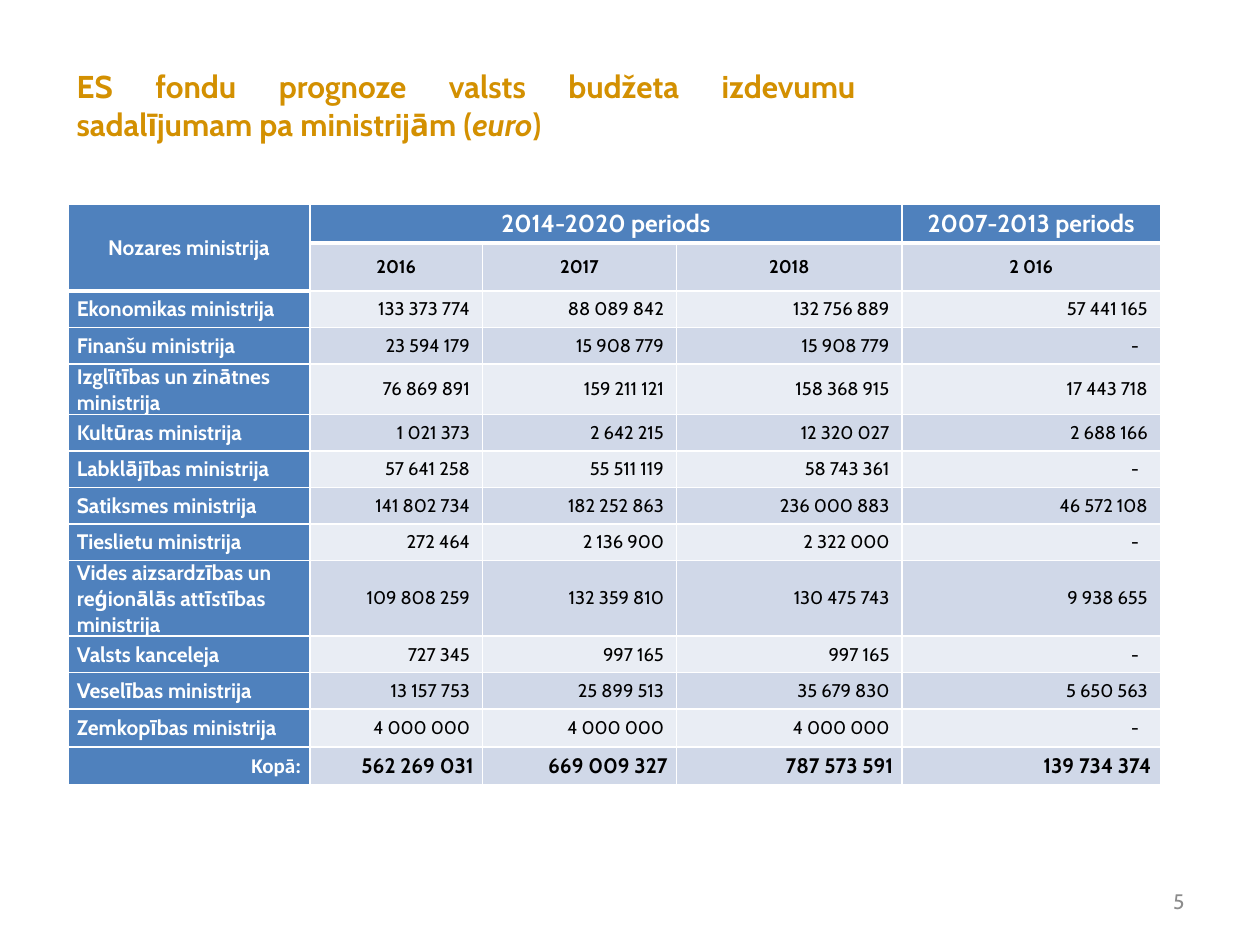
from lxml.etree import SubElement
from pptx import Presentation
from pptx.dml.color import RGBColor
from pptx.enum.text import MSO_ANCHOR, PP_ALIGN as AL
from pptx.oxml.ns import qn
from pptx.util import Inches, Pt

GOLD = RGBColor(0xD3, 0x90, 0x01)
GRAY = RGBColor(0x8C, 0x8C, 0x8C)
BLUE = RGBColor(0x4F, 0x81, 0xBD)
DARK_BAND = RGBColor(0xD0, 0xD8, 0xE8)
LIGHT_BAND = RGBColor(0xE9, 0xED, 0xF4)
WHITE = RGBColor(0xFF, 0xFF, 0xFF)
BLACK = RGBColor(0, 0, 0)

TITLE = [
    ("ES fondu prognoze valsts budžeta izdevumu sadalījumam pa ministrijām (", False),
    ("euro", True),
    (")", False),
]
PERIODS = ["Nozares ministrija", "2014-2020 periods", "", "", "2007-2013 periods"]
YEARS = ["", "2016", "2017", "2018", "2 016"]
MINISTRIES = [
    ("Ekonomikas ministrija", "133 373 774", "88 089 842", "132 756 889", "57 441 165"),
    ("Finanšu ministrija", "23 594 179", "15 908 779", "15 908 779", "-"),
    ("Izglītības un zinātnes ministrija", "76 869 891", "159 211 121", "158 368 915", "17 443 718"),
    ("Kultūras ministrija", "1 021 373", "2 642 215", "12 320 027", "2 688 166"),
    ("Labklājības ministrija", "57 641 258", "55 511 119", "58 743 361", "-"),
    ("Satiksmes ministrija", "141 802 734", "182 252 863", "236 000 883", "46 572 108"),
    ("Tieslietu ministrija", "272 464", "2 136 900", "2 322 000", "-"),
    ("Vides aizsardzības un reģionālās attīstības ministrija",
     "109 808 259", "132 359 810", "130 475 743", "9 938 655"),
    ("Valsts kanceleja", "727 345", "997 165", "997 165", "-"),
    ("Veselības ministrija", "13 157 753", "25 899 513", "35 679 830", "5 650 563"),
    ("Zemkopības ministrija", "4 000 000", "4 000 000", "4 000 000", "-"),
]
TOTAL = ["Kopā:", "562 269 031", "669 009 327", "787 573 591", "139 734 374"]
ROWS = [PERIODS, YEARS, *MINISTRIES, TOTAL]
LAST = len(ROWS) - 1
COL_WIDTHS = [1.92, 1.37, 1.54, 1.79, 2.05]
ROW_HEIGHTS = [0.31, 0.38] + [0.29] * 10 + [0.3] * 2


def add_run(p, text, size, color, bold=False, italic=False, font="Cabin"):
    r = p.add_run()
    r.text = text
    r.font.name = font
    r.font.size = Pt(size)
    r.font.bold = bold
    r.font.italic = italic
    r.font.color.rgb = color


def add_text_box(s, left, top, width, height, align):
    tf = s.shapes.add_textbox(Inches(left), Inches(top), Inches(width), Inches(height)).text_frame
    tf.word_wrap = True
    tf.vertical_anchor = MSO_ANCHOR.MIDDLE
    tf.paragraphs[0].alignment = align
    return tf.paragraphs[0]


def add_borders(cell, bottom):
    tc_pr = cell._tc.get_or_add_tcPr()
    for side, width in (("L", 1), ("R", 1), ("T", 1), ("B", bottom)):
        ln = SubElement(tc_pr, qn(f"a:ln{side}"), w=str(Pt(width)))
        SubElement(SubElement(ln, qn("a:solidFill")), qn("a:srgbClr"), val=str(WHITE))


def cell_style(row, col):
    if row == 0:
        return 14 if col else 12, AL.CENTER, True
    if row == 1:
        return 10.5, AL.CENTER, True
    if row == LAST:
        return 12, AL.RIGHT, True
    return (10.5, AL.RIGHT, False) if col else (12, AL.LEFT, True)


def fill_cell(cell, row, col, text):
    header = row == 0 or col == 0
    add_borders(cell, 3 if row == 0 or (row == 1 and col == 0) else 1)
    cell.fill.solid()
    cell.fill.fore_color.rgb = BLUE if header else DARK_BAND if row % 2 else LIGHT_BAND
    cell.vertical_anchor = MSO_ANCHOR.MIDDLE
    cell.margin_left = cell.margin_right = Inches(0.07)
    cell.margin_top = cell.margin_bottom = 0
    if not text:
        return
    size, align, bold = cell_style(row, col)
    if col and 1 < row < LAST:
        cell.margin_right = Inches(0.17 if text == "-" else 0.1)
    p = cell.text_frame.paragraphs[0]
    p.alignment = align
    font = "Calibri" if row == LAST and col == 0 else "Cabin"
    add_run(p, text, size, WHITE if header else BLACK, bold, font=font)


def add_budget_table(s):
    table = s.shapes.add_table(len(ROWS), len(COL_WIDTHS), Inches(0.54), Inches(1.62),
                               Inches(sum(COL_WIDTHS)), Inches(sum(ROW_HEIGHTS))).table
    for column, width in zip(table.columns, COL_WIDTHS):
        column.width = Inches(width)
    for table_row, height in zip(table.rows, ROW_HEIGHTS):
        table_row.height = Inches(height)
    for i, row in enumerate(ROWS):
        for j, text in enumerate(row):
            fill_cell(table.cell(i, j), i, j, text)
    table.cell(0, 0).merge(table.cell(1, 0))
    table.cell(0, 1).merge(table.cell(0, 3))


def main():
    prs = Presentation()
    prs.slide_width, prs.slide_height = Inches(10), Inches(7.5)
    s = prs.slides.add_slide(prs.slide_layouts[6])
    add_run(add_text_box(s, 7.17, 6.95, 2.33, 0.4, AL.RIGHT), "5", 12, GRAY)
    p = add_text_box(s, 0.51, 0.6, 6.38, 0.47, AL.JUSTIFY)
    for text, italic in TITLE:
        add_run(p, text, 18, GOLD, True, italic)
    add_budget_table(s)
    prs.save("out.pptx")


if __name__ == "__main__":
    main()
